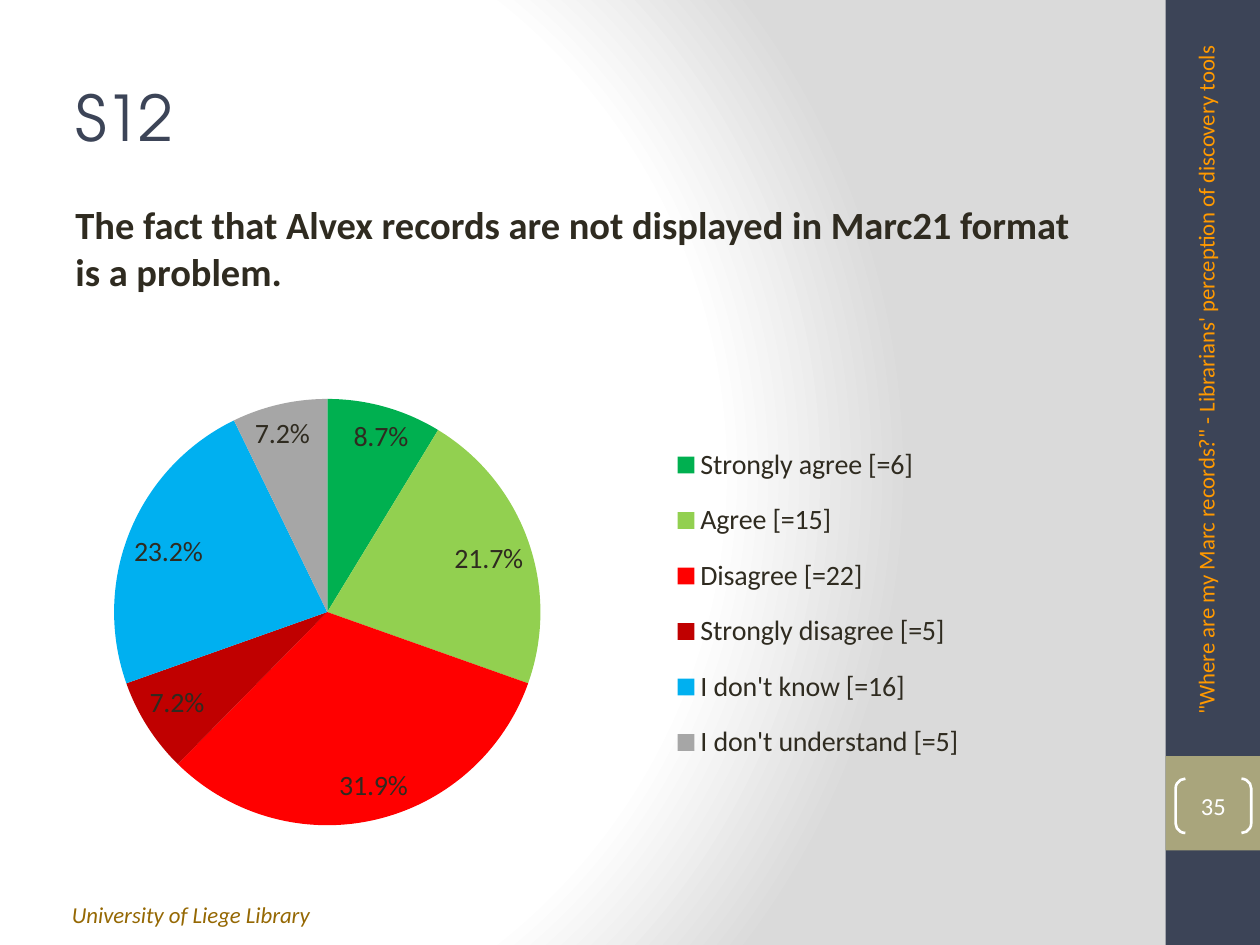
import pptx
import pptx.chart.data
import pptx.dml.color
import pptx.enum.chart
import pptx.enum.shapes
import pptx.enum.text
import pptx.oxml
import pptx.oxml.ns
import pptx.util

Pt = pptx.util.Pt
qn = pptx.oxml.ns.qn
ALIGN = pptx.enum.text.PP_ALIGN
ANCHOR = pptx.enum.text.MSO_ANCHOR
SHAPE = pptx.enum.shapes.MSO_SHAPE

TITLE = "S12"
STATEMENT = "The fact that Alvex records are not displayed in Marc21 format is a problem."
FOOTER = "University of Liege Library"
SIDE_TITLE = "\"Where are my Marc records?\" - Librarians' perception of discovery tools"
PAGE = "35"
ANSWERS = [  # label, share, slice colour
    ("Strongly agree [=6]", 0.087, "00B050"),
    ("Agree [=15]", 0.217, "92D050"),
    ("Disagree [=22]", 0.319, "FF0000"),
    ("Strongly disagree [=5]", 0.072, "C00000"),
    ("I don't know [=16]", 0.232, "00B0F0"),
    ("I don't understand [=5]", 0.072, "A6A6A6"),
]

THEME = {
    "heading_font": "TeX Gyre Adventor", "body_font": "Calibri",
    "navy": "3C4457", "olive": "A9A57C", "text": "2F2B20", "white": "FFFFFF",
    "grey": "DADADA", "footer": "956803", "side": "FF9900",
    "title_size": 36, "statement_size": 22, "chart_size": 16,
    "page_size": 14, "small_size": 13,
}

SLIDE_W, SLIDE_H = 720, 540
BAR_W = 54
BAR_X = SLIDE_W - BAR_W
MARGIN, CONTENT_W = 36, 600


def rgb(name):
    return pptx.dml.color.RGBColor.from_string(THEME.get(name, name))


def box(left, top, width, height):
    return Pt(left), Pt(top), Pt(width), Pt(height)


def style(font, size, color, face="body_font", bold=False, italic=False):
    font.name, font.size = THEME[face], Pt(THEME[size])
    font.color.rgb = rgb(color)
    font.bold, font.italic = bold, italic


def write(sp, text, size, color, align=ALIGN.LEFT, anchor=ANCHOR.TOP, **look):
    tf = sp.text_frame
    tf.text = text
    tf.word_wrap = True
    tf.vertical_anchor = anchor
    p = tf.paragraphs[0]
    p.alignment = align
    style(p.runs[0].font, size, color, **look)
    return tf


def add_block(s, place, color):
    sp = s.shapes.add_shape(SHAPE.RECTANGLE, *box(*place))
    sp.shadow.inherit = False
    sp.fill.solid()
    sp.fill.fore_color.rgb = rgb(color)
    sp.line.fill.background()


def set_background(s):
    """Radial gradient, white on the left and grey on the right."""
    s.background.fill.gradient()
    old = s.element.find(".//" + qn("a:gradFill"))
    stops = "".join(
        f'<a:gs pos="{pos * 1000}"><a:srgbClr val="{THEME[color]}"/></a:gs>'
        for pos, color in [(0, "white"), (75, "white"), (100, "grey")])
    old.getparent().replace(old, pptx.oxml.parse_xml(
        f'<a:gradFill {pptx.oxml.ns.nsdecls("a")} rotWithShape="1"><a:gsLst>{stops}</a:gsLst>'
        '<a:path path="circle"><a:fillToRect l="20000" t="50000" r="100000" b="50000"/>'
        '</a:path></a:gradFill>'))


def manual_layout(x, y, w, h, inner=False):
    """Chart layout element, in fractions of the chart's size."""
    target = '<c:layoutTarget val="inner"/>' if inner else ""
    values = "".join(f'<c:{k} val="{v}"/>' for k, v in zip("xywh", (x, y, w, h)))
    return pptx.oxml.parse_xml(
        f'<c:layout {pptx.oxml.ns.nsdecls("c")}><c:manualLayout>{target}'
        f'<c:xMode val="edge"/><c:yMode val="edge"/>{values}</c:manualLayout></c:layout>')


def drop_layout(element):
    for old in element.findall(qn("c:layout")):
        element.remove(old)


def add_pie(s, place):
    data = pptx.chart.data.CategoryChartData(number_format="0.0%")
    data.categories = [label for label, _, _ in ANSWERS]
    data.add_series("Series 1", [share for _, share, _ in ANSWERS])
    chart = s.shapes.add_chart(pptx.enum.chart.XL_CHART_TYPE.PIE, *box(*place), data).chart
    chart.has_title = False
    style(chart.font, "chart_size", "text")

    plot = chart.plots[0]
    plot.vary_by_categories = True
    series = plot.series[0]
    for i, (_, _, color) in enumerate(ANSWERS):
        fill = series.points[i].format.fill
        fill.solid()
        fill.fore_color.rgb = rgb(color)

    labels = series.data_labels
    labels.show_value = True
    labels.show_percentage = False
    labels.number_format, labels.number_format_is_linked = "0.0%", False
    labels.position = pptx.enum.chart.XL_LABEL_POSITION.BEST_FIT
    style(labels.font, "chart_size", "text")

    chart.has_legend = True
    legend = chart.legend
    legend.position = pptx.enum.chart.XL_LEGEND_POSITION.RIGHT
    legend.include_in_layout = False
    style(legend.font, "chart_size", "text")

    plot_area = chart.element.find(".//" + qn("c:plotArea"))
    drop_layout(plot_area)
    plot_area.insert(0, manual_layout(0.03, 0.11, 0.43, 0.8, inner=True))
    legend_xml = chart.element.find(".//" + qn("c:legend"))
    drop_layout(legend_xml)
    legend_xml.find(qn("c:legendPos")).addnext(manual_layout(0.58, 0.17, 0.32, 0.65))


def main():
    prs = pptx.Presentation()
    prs.slide_width, prs.slide_height = Pt(SLIDE_W), Pt(SLIDE_H)
    s = prs.slides.add_slide(prs.slide_layouts[5])
    set_background(s)

    add_block(s, (BAR_X, 0, BAR_W, SLIDE_H), "navy")
    add_block(s, (BAR_X, 432, BAR_W, BAR_W), "olive")

    footer = s.shapes.add_textbox(*box(34, 511, 383, 23))
    write(footer, FOOTER, "small_size", "footer", italic=True)

    title = s.shapes.title
    title.left, title.top, title.width, title.height = box(MARGIN, 21.6, CONTENT_W, 90)
    tf = write(title, TITLE, "title_size", "navy", anchor=ANCHOR.MIDDLE, face="heading_font")
    tf.paragraphs[0].runs[0].font._element.set("spc", "-100")

    statement = s.shapes.add_textbox(*box(MARGIN, 111.6, CONTENT_W, 80))
    write(statement, STATEMENT, "statement_size", "text", bold=True)

    page = s.shapes.add_shape(SHAPE.DOUBLE_BRACKET, *box(671.8, 445, 43.2, 31))
    page.adjustments[0] = 0.18
    page.shadow.inherit = False
    page.fill.background()
    page.line.color.rgb = rgb("white")
    page.line.width = Pt(1.5)
    tf = write(page, PAGE, "page_size", "white", ALIGN.CENTER, ANCHOR.MIDDLE)
    tf.margin_left = tf.margin_right = tf.margin_top = tf.margin_bottom = 0

    side = s.shapes.add_textbox(*box(491.8, 200.9, 400.3, 28.8))
    side.rotation = 270
    write(side, SIDE_TITLE, "small_size", "side")

    add_pie(s, (48.2, 190.8, 566.6, 311.8))
    prs.save("out.pptx")


if __name__ == "__main__":
    main()
